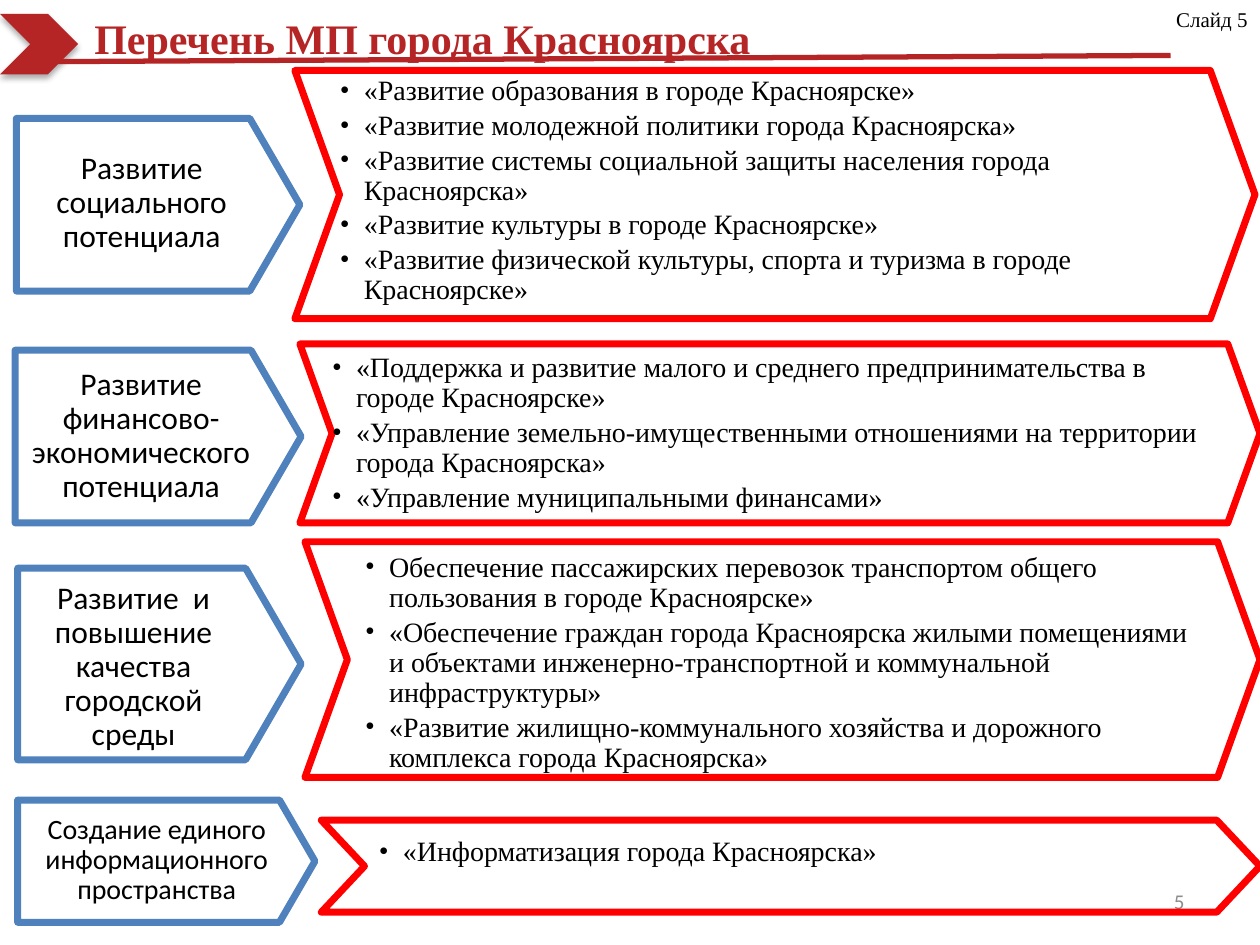
from lxml import etree
from pptx import Presentation, util as u
from pptx.dml.color import RGBColor
from pptx.enum import shapes, text
from pptx.oxml.ns import qn

COLS, ROWS = 100, 75  # grid of the slide; boxes are (left, top, width, height)
HUES = {"blue": "4F81BD", "red": "FF0000", "dark": "B52525",
        "black": "000000", "grey": "8C8C8C"}
SERIF, SANS = "Times New Roman", "Calibri"
KIND, ALIGN, MID = shapes.MSO_SHAPE, text.PP_ALIGN, text.MSO_ANCHOR.MIDDLE

# label, size, plate, label offset and size, arrow, notch, list offset and size, items
GOALS = [
    ("Развитие социального потенциала", 18, (1.3, 9.4, 22.5, 13.7),
     (1.3, 2.2, 17.3, 9.2), (23.4, 5.6, 76.2, 19.7), 0.18, (2.6, 0, 71.3, 19.6),
     ["«Развитие образования в городе Красноярске»",
      "«Развитие молодежной политики города Красноярска»",
      "«Развитие системы социальной защиты населения города Красноярска»",
      "«Развитие культуры в городе Красноярске»",
      "«Развитие физической культуры, спорта и туризма в городе Красноярске»"]),
    ("Развитие финансово-экономического потенциала", 18, (1.2, 27.8, 22.7, 13.7),
     (-1.2, 0.9, 22.4, 11.9), (23.8, 27.3, 76.2, 14.2), 0.18, None,
     ["«Поддержка и развитие малого и среднего предпринимательства в городе Красноярске»",
      "«Управление земельно-имущественными отношениями на территории города Красноярска»",
      "«Управление муниципальными финансами»"]),
    ("Развитие  и повышение качества городской среды", 18, (1.4, 45.1, 22.5, 15.2),
     (0, 0.6, 18.4, 14.6), (24.2, 43, 75.8, 18.7), 0.18, (3.8, 0.4, 67.3, 18.8),
     ["Обеспечение пассажирских перевозок транспортом общего пользования в городе Красноярске»",
      "«Обеспечение граждан города Красноярска жилыми помещениями и объектами "
      "инженерно-транспортной и коммунальной инфраструктуры»",
      "«Развитие жилищно-коммунального хозяйства и дорожного комплекса города Красноярска»"]),
    ("Создание единого информационного пространства", 16, (1.4, 63.5, 23.6, 9.7),
     (0.2, 0.7, 21.7, 8.3), (25.5, 65.1, 74.5, 7.3), 0.47, (3.6, 0.9, 51.3, 3.4),
     ["«Информатизация города Красноярска»"]),
]

deck = Presentation()
deck.slide_width, deck.slide_height = u.Inches(10), u.Inches(7.5)
page = deck.slides.add_slide(deck.slide_layouts[6])


def grid(box):
    step = deck.slide_width / COLS, deck.slide_height / ROWS
    return [u.Emu(round(v * step[i % 2])) for i, v in enumerate(box)]


def inner(box, part):
    """Turn a part placed relative to a box into a box on the slide."""
    return box[0] + part[0], box[1] + part[1], part[2], part[3]


def hue(name):
    return RGBColor.from_string(HUES[name])


def node(up, tag, **attrs):
    return etree.SubElement(up, qn(tag), attrs)


def frame(box):
    body = page.shapes.add_textbox(*grid(box)).text_frame
    body.word_wrap = True
    return body


def write(para, words, size, font=SERIF, tint="black", align=ALIGN.LEFT, bold=False):
    para.alignment = align
    run = para.add_run()
    run.text = words
    run.font.size, run.font.name, run.font.bold = u.Pt(size), font, bold
    run.font.color.rgb = hue(tint)


def space(para, after):
    para.line_spacing = 0.9
    para.space_after = u.Pt(after)


def fill_list(body, items):
    for i, item in enumerate(items):
        para = body.add_paragraph() if i else body.paragraphs[0]
        props = para._p.get_or_add_pPr()
        props.set("marL", str(u.Inches(0.19)))
        props.set("indent", str(-u.Inches(0.19)))
        node(props, "a:buFont", typeface=SERIF)
        node(props, "a:buChar", char="•")
        space(para, 2.5)
        write(para, item, 16)


def outline(kind, box, notch, tint):
    shape = page.shapes.add_shape(kind, *grid(box))
    shape.shadow.inherit = False
    shape.adjustments[0] = notch
    shape.fill.background()
    shape.line.color.rgb = hue(tint)
    shape.line.width = u.Pt(4)
    node(shape.line._get_or_add_ln(), "a:round")
    return shape


def goal(label, size, plate, spot, arrow, notch, area, items):
    """One row: a blue plate with the goal and a red arrow with its programmes."""
    outline(KIND.PENTAGON, plate, 0.29, "blue")
    para = frame(inner(plate, spot)).paragraphs[0]
    space(para, 6)
    write(para, label, size, SANS, align=ALIGN.CENTER)
    shape = outline(KIND.CHEVRON, arrow, notch, "red")
    if area:
        body = frame(inner(arrow, area))
    else:
        body = shape.text_frame
        body.margin_left = body.margin_right = body.margin_top = body.margin_bottom = 0
        body.vertical_anchor = MID
    fill_list(body, items)


def header(box):
    left, top, wide, high = box
    body = frame((left + 6.5, top - 1.4, 90, 6.5))
    body.vertical_anchor = MID
    write(body.paragraphs[0], "Перечень МП города Красноярска", 24, tint="dark", bold=True)
    mark = page.shapes.add_shape(KIND.CHEVRON, *grid((left, top, 6.2, high)))
    mark.shadow.inherit = False
    mark.fill.solid()
    mark.fill.fore_color.rgb = hue("dark")
    mark.line.fill.background()
    cast = node(mark._element.spPr.find(qn("a:effectLst")), "a:outerShdw",
                blurRad=str(u.Pt(3.5)), dist=str(u.Pt(2.2)), dir="5400000", rotWithShape="0")
    node(node(cast, "a:srgbClr", val=HUES["black"]), "a:alpha", val="32000")
    ends = grid((left + 3.1, top + 3.8, left + wide, top + 3.3))
    rule = page.shapes.add_connector(shapes.MSO_CONNECTOR.STRAIGHT, *ends)
    rule.line.color.rgb = hue("dark")
    rule.line.width = u.Pt(3)
    node(rule._element.spPr, "a:effectLst")


def number(box, words, font, tint):
    body = frame(box)
    body.vertical_anchor = MID
    write(body.paragraphs[0], words, 12, font, tint, ALIGN.RIGHT)


number((71.7, 69.5, 23.3, 4), "5", SANS, "grey")
number((90.2, 0, 9.8, 3), "Слайд 5", SERIF, "black")
for row in GOALS:
    goal(*row)
header((0, 1.1, 92.9, 4.8))
deck.save("out.pptx")
